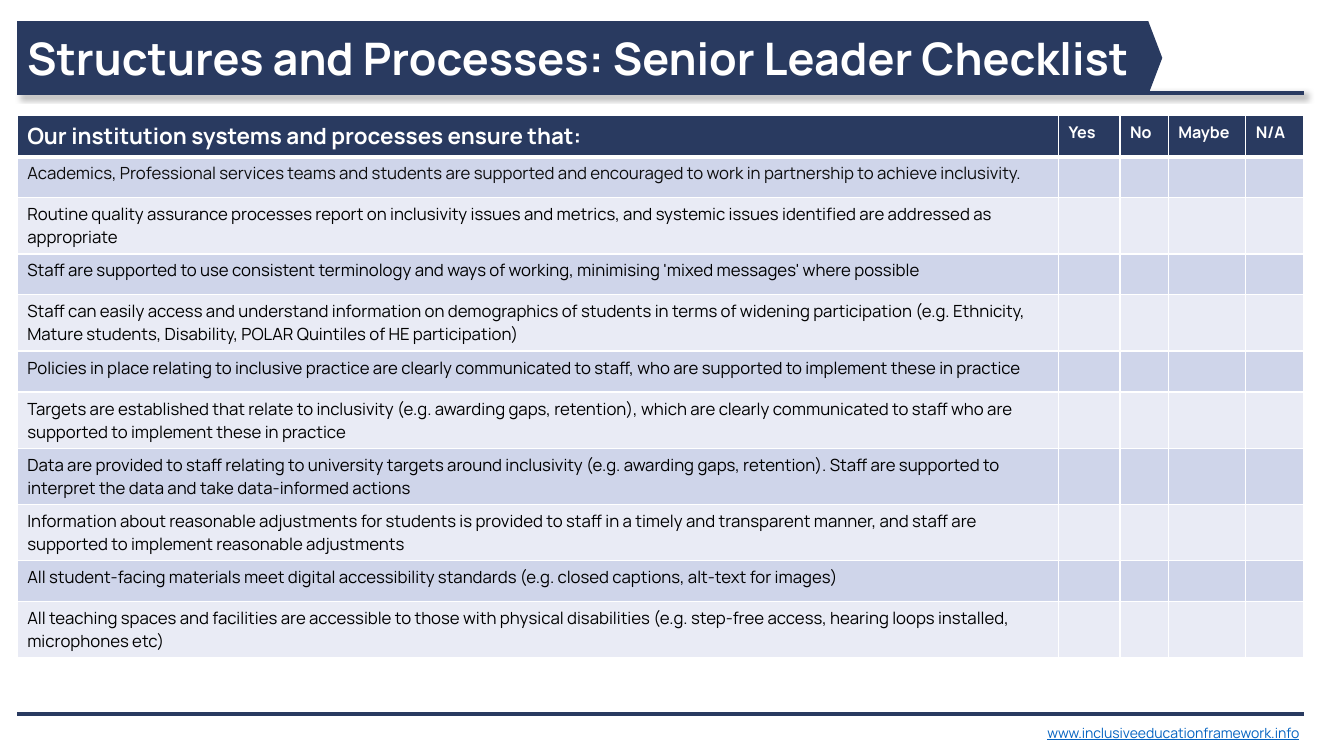
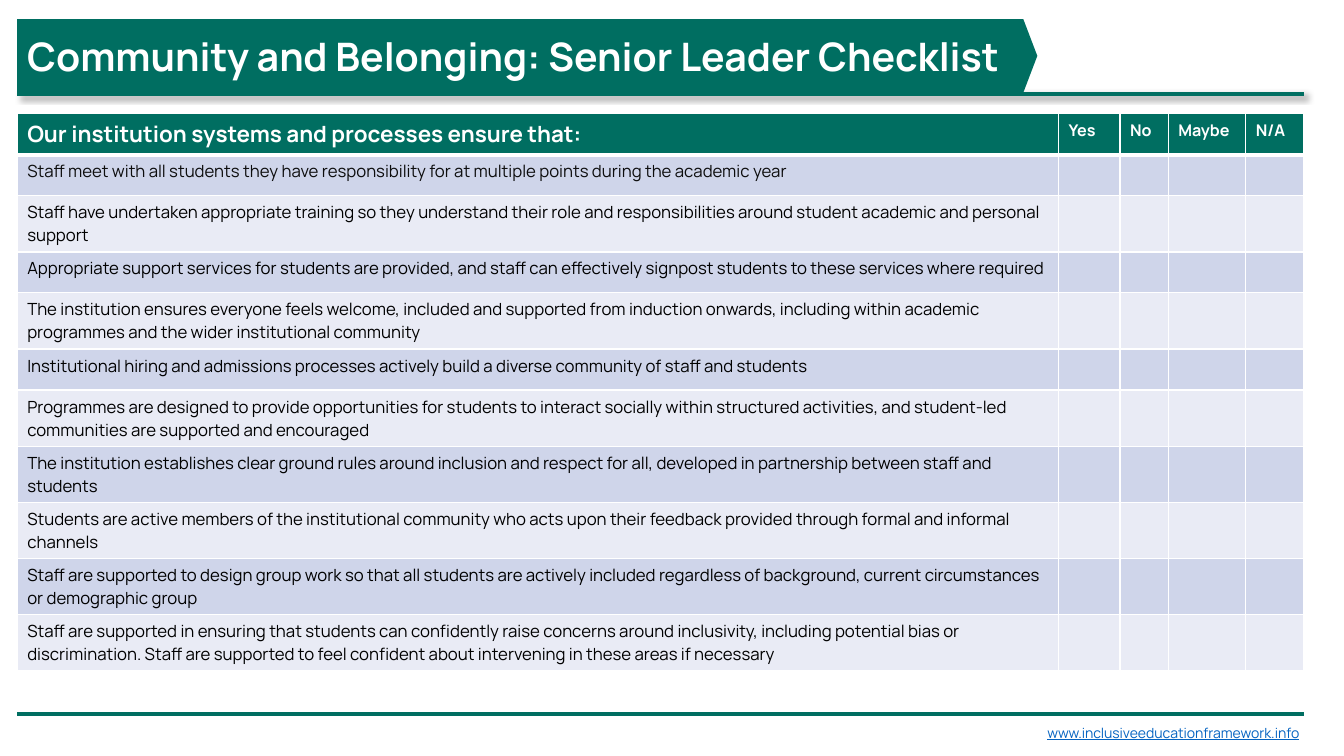
from lxml import etree
from pptx import Presentation
from pptx.dml.color import RGBColor
from pptx.enum.shapes import MSO_CONNECTOR as Connector, MSO_SHAPE as Preset
from pptx.enum.text import MSO_ANCHOR as Anchor, PP_ALIGN as Align
from pptx.oxml import parse_xml
from pptx.oxml.ns import nsdecls, qn
from pptx.util import Inches, Pt

# Shared look
colour = RGBColor.from_string
FONT = "Manrope"
WHITE, BLACK, NEAR_BLACK, LINK = "FFFFFF", "000000", "0D0D0D", "0563C1"
STRIPES = ["CFD5EA", "E9EBF5"]
HEADINGS = ["Our institution systems and processes ensure that:", "Yes", "No", "Maybe", "N/A"]
WEBSITE = "www.inclusiveeducationframework.info"

# Shared layout, in percent of the slide's width or height
LEFT, RIGHT = 1.28, 97
COLUMNS = [77.48, 4.57, 3.6, 5.77, 4.33]
ROW = 5.42
BAND_HEIGHT, ARROW_WIDTH = 9.73, 14.18
TABLE_DROP = 12.53
FOOTER_RULE = 94.4

PAGES = [
    {
        "title": "Structures and Processes: Senior Leader Checklist",
        "size": 32, "accent": "293A60",
        "top": 2.8, "rule": 12.27, "band": 83.85, "tip": 86.48,
        "items": [
            "Academics, Professional services teams and students are supported and encouraged to work in partnership to achieve inclusivity.",
            "Routine quality assurance processes report on inclusivity issues and metrics, and systemic issues identified are addressed as appropriate",
            "Staff are supported to use consistent terminology and ways of working, minimising 'mixed messages' where possible",
            "Staff can easily access and understand information on demographics of students in terms of widening participation (e.g. Ethnicity, Mature students, Disability, POLAR Quintiles of HE participation)",
            "Policies in place relating to inclusive practice are clearly communicated to staff, who are supported to implement these in practice",
            "Targets are established that relate to inclusivity (e.g. awarding gaps, retention), which are clearly communicated to staff who are supported to implement these in practice",
            "Data are provided to staff relating to university targets around inclusivity (e.g. awarding gaps, retention). Staff are supported to interpret the data and take data-informed actions",
            "Information about reasonable adjustments for students is provided to staff in a timely and transparent manner, and staff are supported to implement reasonable adjustments",
            "All student-facing materials meet digital accessibility standards (e.g. closed captions, alt-text for images)",
            "All teaching spaces and facilities are accessible to those with physical disabilities (e.g. step-free access, hearing loops installed, microphones etc)",
        ],
    },
    {
        "title": "Community and Belonging: Senior Leader Checklist",
        "size": 28, "accent": "006E61",
        "top": 2.53, "rule": 12.4, "band": 74.78, "tip": 77.18,
        "items": [
            "Staff meet with all students they have responsibility for at multiple points during the academic year",
            "Staff have undertaken appropriate training so they understand their role and responsibilities around student academic and personal support",
            "Appropriate support services for students are provided, and staff can effectively signpost students to these services where required",
            "The institution ensures everyone feels welcome, included and supported from induction onwards, including within academic programmes and the wider institutional community",
            "Institutional hiring and admissions processes actively build a diverse community of staff and students",
            "Programmes are designed to provide opportunities for students to interact socially within structured activities, and student-led communities are supported and encouraged",
            "The institution establishes clear ground rules around inclusion and respect for all, developed in partnership between staff and students",
            "Students are active members of the institutional community who acts upon their feedback provided through formal and informal channels",
            "Staff are supported to design group work so that all students are actively included regardless of background, current circumstances or demographic group",
            "Staff are supported in ensuring that students can confidently raise concerns around inclusivity, including potential bias or discrimination. Staff are supported to feel confident about intervening in these areas if necessary",
        ],
    },
]

deck = Presentation()
deck.slide_width, deck.slide_height = Inches(13.33), Inches(7.5)


def area(*shares):
    """Turn alternating width and height percentages into lengths."""
    sides = (deck.slide_width, deck.slide_height)
    return [round(share * sides[i % 2] / 100) for i, share in enumerate(shares)]


def write(frame, text, size, shade, bold=False):
    para = frame.paragraphs[0]
    para.text = text
    para.alignment = Align.LEFT
    para.font.name, para.font.size, para.font.bold = FONT, Pt(size), bold
    para.font.color.rgb = colour(shade)
    return para


for content in PAGES:
    page = deck.slides.add_slide(deck.slide_layouts[6])
    accent, top = content["accent"], content["top"]

    # Checklist table
    grid = [HEADINGS] + [[item] + [""] * (len(HEADINGS) - 1) for item in content["items"]]
    table = page.shapes.add_table(
        len(grid), len(COLUMNS),
        *area(LEFT, top + TABLE_DROP, sum(COLUMNS), ROW * len(grid))).table
    for column, share in zip(table.columns, COLUMNS):
        column.width = area(share)[0]
    for r, texts in enumerate(grid):
        header = r == 0
        for c, text in enumerate(texts):
            cell = table.cell(r, c)
            cell.fill.solid()
            cell.fill.fore_color.rgb = colour(accent if header else STRIPES[(r - 1) % 2])
            if header:
                write(cell.text_frame, text, 11.5 if c else 16, WHITE, True)
            else:
                write(cell.text_frame, text, 12, NEAR_BLACK if r == 1 else BLACK)
            # White cell borders, heavier below the header
            edges = {"lnL": 1, "lnR": 1, "lnB": 3 if header else 1}
            for position, (edge, width) in enumerate(edges.items()):
                cell._tc.get_or_add_tcPr().insert(position, parse_xml(
                    f'<a:{edge} {nsdecls("a")} w="{Pt(width)}"><a:solidFill>'
                    f'<a:srgbClr val="{WHITE}"/></a:solidFill></a:{edge}>'))

    # Rules below the title and above the footer; only the first casts a shadow
    for height, shadowed in ((content["rule"], True), (FOOTER_RULE, False)):
        rule = page.shapes.add_connector(
            Connector.STRAIGHT, *area(LEFT, height, RIGHT, height))
        rule.line.color.rgb = colour(accent)
        rule.line.width = Pt(3)
        effects = etree.SubElement(rule._element.spPr, qn("a:effectLst"))
        if shadowed:
            effects.append(parse_xml(
                f'<a:outerShdw {nsdecls("a")} blurRad="{Pt(4)}" dist="{Pt(3)}" '
                f'dir="{45 * 60000}" algn="tl" rotWithShape="0"><a:srgbClr val="{BLACK}">'
                '<a:alpha val="40000"/></a:srgbClr></a:outerShdw>'))

    # Title band with its arrow end
    arrow = page.shapes.add_shape(
        Preset.PENTAGON, *area(content["tip"] - ARROW_WIDTH, top, ARROW_WIDTH, BAND_HEIGHT))
    arrow.adjustments[0] = 0.19
    band = page.shapes.add_shape(
        Preset.RECTANGLE, *area(LEFT, top, content["band"], BAND_HEIGHT))
    for shape in (arrow, band):
        shape.shadow.inherit = False
        shape.fill.solid()
        shape.fill.fore_color.rgb = colour(accent)
        shape.line.fill.background()
    band.text_frame.word_wrap = True
    band.text_frame.vertical_anchor = Anchor.MIDDLE
    write(band.text_frame, content["title"], content["size"], WHITE, True)

    # Footer address
    footer = page.shapes.add_textbox(*area(77.19, 95.2, 21, 3.6))
    footer.text_frame.word_wrap = True
    write(footer.text_frame, WEBSITE, 10, LINK).font.underline = True

deck.save("out.pptx")
